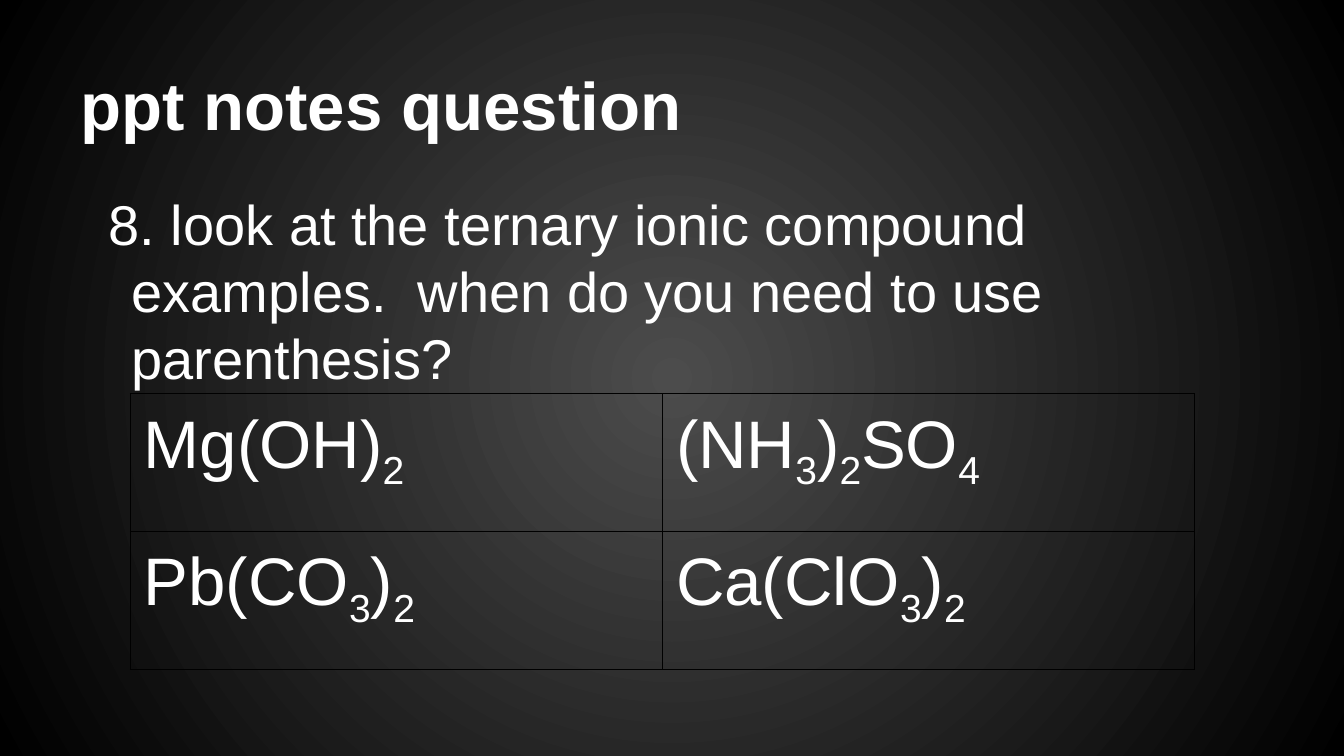
from itertools import product

from lxml.etree import SubElement
from pptx import Presentation
from pptx.dml.color import RGBColor
from pptx.enum.text import MSO_ANCHOR, MSO_AUTO_SIZE, PP_ALIGN
from pptx.oxml import parse_xml
from pptx.oxml.ns import nsdecls, qn
from pptx.util import Inches, Pt

WHITE = RGBColor(0xFF, 0xFF, 0xFF)
BLACK = RGBColor(0x00, 0x00, 0x00)
GRAY = RGBColor(0x4C, 0x4C, 0x4C)
MARGIN = Inches(0.1)
FORMULAS = [["Mg(OH)2", "(NH3)2SO4"], ["Pb(CO3)2", "Ca(ClO3)2"]]


def add_run(p, text, size, bold=False):
    r = p.add_run()
    r.text = text
    for name, value in {"name": "Arial", "size": Pt(size), "bold": bold}.items():
        setattr(r.font, name, value)
    r.font.color.rgb = WHITE
    return r


def place(sp, left, top, width, height, anchor):
    """Move a placeholder and return its cleanly formatted first paragraph."""
    sp.left, sp.top = Inches(left), Inches(top)
    sp.width, sp.height = Inches(width), Inches(height)
    frame = {"margin_left": MARGIN, "margin_right": MARGIN,
             "margin_top": MARGIN, "margin_bottom": MARGIN,
             "word_wrap": True, "auto_size": MSO_AUTO_SIZE.NONE,
             "vertical_anchor": anchor}
    for name, value in frame.items():
        setattr(sp.text_frame, name, value)
    p = sp.text_frame.paragraphs[0]
    p.alignment = PP_ALIGN.LEFT
    return p


prs = Presentation()
prs.slide_width = Inches(10)
prs.slide_height = prs.slide_width * 9 // 16
s = prs.slides.add_slide(prs.slide_layouts[1])

# Radial background, gray in the centre
fill = s.background.fill
fill.gradient()
for stop, color, position in zip(fill.gradient_stops, (GRAY, BLACK), (0, 1)):
    stop.color.rgb = color
    stop.position = position
grad = s.background._cSld.find(".//" + qn("a:gradFill"))
grad.replace(grad.find(qn("a:lin")), parse_xml(
    f'<a:path {nsdecls("a")} path="circle">'
    '<a:fillToRect l="50000" t="50000" r="50000" b="50000"/></a:path>'))

# Title and question
p = place(s.shapes.title, 0.5, 0.23, 9, 0.94, MSO_ANCHOR.BOTTOM)
add_run(p, "ppt notes question", 36, bold=True)

p = place(s.placeholders[1], 0.5, 1.31, 9, 4.07, MSO_ANCHOR.TOP)
p.space_before = Pt(6)
pPr = p._p.get_or_add_pPr()
pPr.set("marL", str(Inches(0.38)))
pPr.set("indent", str(Inches(-0.17)))
SubElement(pPr, qn("a:buNone"))
add_run(p, "8. look at the ternary ionic compound examples.  "
           "when do you need to use parenthesis?", 30)

# Formula table: digits become subscripts
table = s.shapes.add_table(2, 2, Inches(0.97), Inches(2.93),
                           Inches(7.92), Inches(2.05)).table
table.first_row = table.horz_banding = False
for row, col in product(range(2), repeat=2):
    cell = table.cell(row, col)
    for side in ("left", "right", "top", "bottom"):
        setattr(cell, f"margin_{side}", MARGIN)
    p = cell.text_frame.paragraphs[0]
    text = FORMULAS[row][col]
    for digit in "234":
        text = text.replace(digit, f"|{digit}|")
    for part in filter(None, text.split("|")):
        r = add_run(p, part, 36)
        if part.isdigit():
            r.font._element.set("baseline", "-25000")
    tcPr = cell._tc.get_or_add_tcPr()
    for edge in ("lnL", "lnR", "lnT", "lnB"):
        tcPr.append(parse_xml(
            f'<a:{edge} {nsdecls("a")} w="{Pt(0.75)}"><a:solidFill>'
            f'<a:srgbClr val="{BLACK}"/></a:solidFill></a:{edge}>'))
    cell.fill.background()

prs.save("out.pptx")
